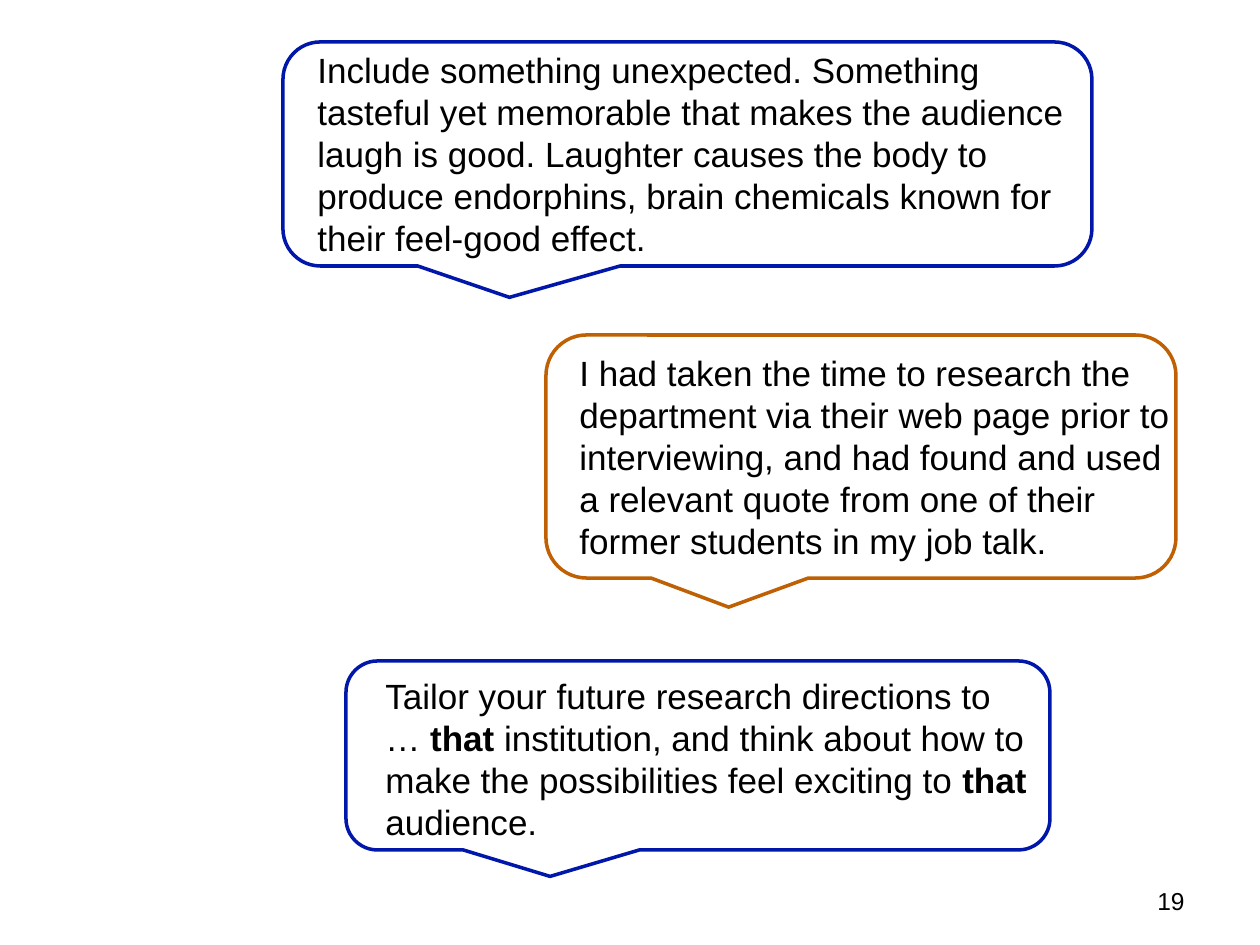
from pptx import Presentation
from pptx.dml.color import RGBColor
from pptx.enum.shapes import MSO_SHAPE
from pptx.enum.text import MSO_AUTO_SIZE, PP_ALIGN
from pptx.util import Pt

CALLOUT = MSO_SHAPE.ROUNDED_RECTANGULAR_CALLOUT
GROW = MSO_AUTO_SIZE.SHAPE_TO_FIT_TEXT
FIXED = MSO_AUTO_SIZE.NONE
LEFT, RIGHT = PP_ALIGN.LEFT, PP_ALIGN.RIGHT
BLUE = RGBColor(0x00, 0x17, 0xAA)
ORANGE = RGBColor(0xBE, 0x60, 0x03)
BLACK = RGBColor(0, 0, 0)
FONT = "Arial"
EMU_PER_PX = 914400 / 126

TIPS = [
    {
        "runs": [("Include something unexpected. Something tasteful yet memorable that "
                  "makes the audience laugh is good. Laughter causes the body to produce "
                  "endorphins, brain chemicals known for their feel-good effect.", False)],
        "quote": (305, 42, 787, 224),
        "bubble": (283, 42, 809, 224),
        "tail": (-0.22, 0.64),
        "color": BLUE,
    },
    {
        "runs": [("I had taken the time to research the department via their web page "
                  "prior to interviewing, and had found and used a relevant quote from "
                  "one of their former students in my job talk.", False)],
        "quote": (567, 345, 630, 224),
        "bubble": (546, 335, 630, 243),
        "tail": (-0.21, 0.62),
        "color": ORANGE,
    },
    {
        "runs": [("Tailor your future research directions to … ", False),
                 ("that", True),
                 (" institution, and think about how to make the possibilities feel "
                  "exciting to ", False),
                 ("that ", True),
                 ("audience.", False)],
        "quote": (373, 668, 667, 183),
        "bubble": (346, 661, 704, 189),
        "tail": (-0.21, 0.64),
        "color": BLUE,
    },
]
PAGE_NUMBER = "19"
PAGE_NUMBER_BOX = (903, 880, 294, 65)


def emu(*lengths):
    return [round(length * EMU_PER_PX) for length in lengths]


def add_text(slide, box, runs, size, align=LEFT, fit=FIXED):
    frame = slide.shapes.add_textbox(*emu(*box)).text_frame
    frame.word_wrap = True
    frame.auto_size = fit
    paragraph = frame.paragraphs[0]
    paragraph.alignment = align
    for words, bold in runs:
        run = paragraph.add_run()
        run.text = words
        run.font.name = FONT
        run.font.size = Pt(size)
        run.font.bold = bold
        run.font.color.rgb = BLACK


def add_bubble(slide, box, tail, color):
    bubble = slide.shapes.add_shape(CALLOUT, *emu(*box))
    bubble.shadow.inherit = False
    bubble.fill.background()
    bubble.line.color.rgb = color
    bubble.line.width = Pt(2)
    for index, offset in enumerate(tail):
        bubble.adjustments[index] = offset


def main():
    deck = Presentation()
    deck.slide_width, deck.slide_height = emu(1260, 945)
    slide = deck.slides.add_slide(deck.slide_layouts[6])
    for tip in TIPS:
        add_bubble(slide, tip["bubble"], tip["tail"], tip["color"])
        add_text(slide, tip["quote"], tip["runs"], 20, fit=GROW)
    add_text(slide, PAGE_NUMBER_BOX, [(PAGE_NUMBER, False)], 14, RIGHT)
    deck.save("out.pptx")


if __name__ == "__main__":
    main()
